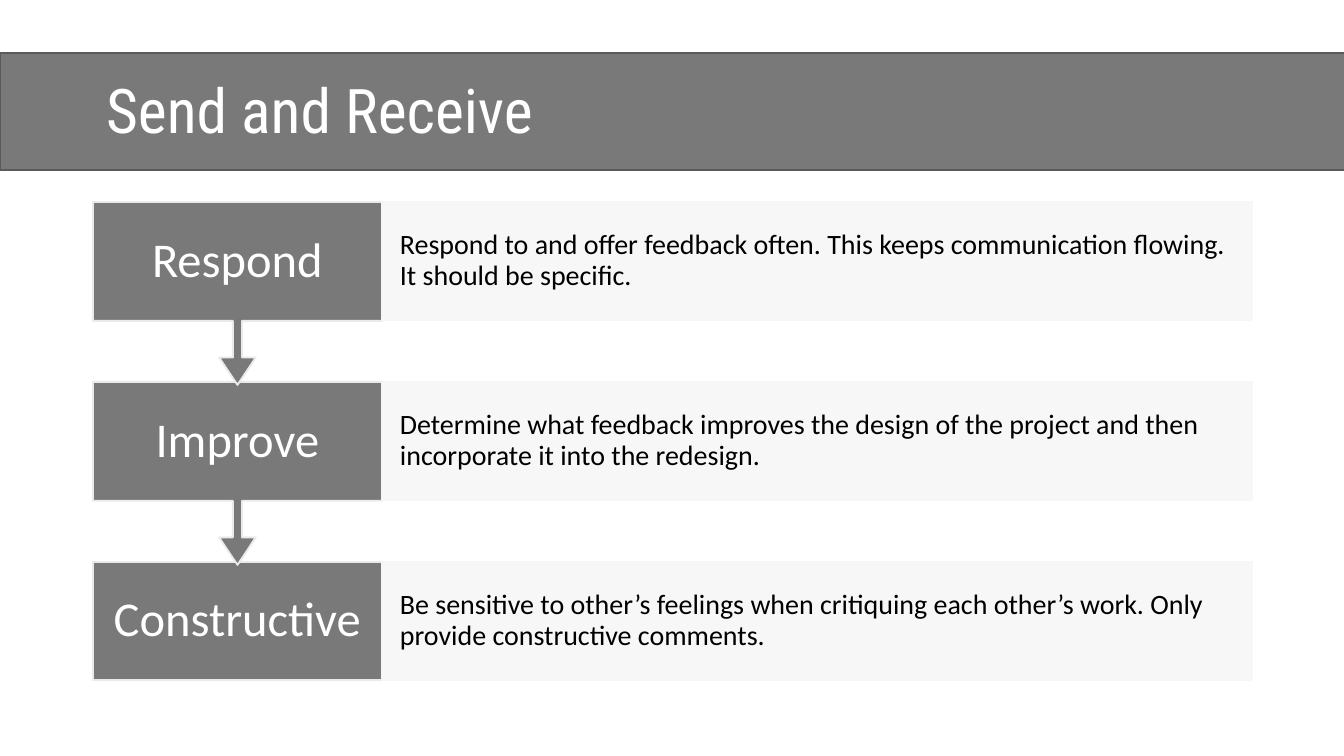
import dataclasses

import lxml.etree
import pptx
import pptx.dml.color
import pptx.enum.shapes
import pptx.enum.text
import pptx.oxml.ns
import pptx.util

# Content
TITLE = "Send and Receive"
STEPS = [
    ("Respond", "Respond to and offer feedback often. This keeps communication "
                "flowing. It should be specific."),
    ("Improve", "Determine what feedback improves the design of the project and "
                "then incorporate it into the redesign."),
    ("Constructive", "Be sensitive to other’s feelings when critiquing each "
                     "other’s work. Only provide constructive comments."),
]


@dataclasses.dataclass(frozen=True)
class Theme:
    accent: str = "797979"
    band_line: str = "5A5A5A"
    step_line: str = "EAEAEA"
    panel: str = "F7F7F7"
    panel_opacity: int = 90
    light: str = "FFFFFF"
    dark: str = "000000"
    title_font: str = "Roboto Condensed"
    body_font: str = "Calibri"
    title_size: int = 33
    step_size: int = 26
    detail_size: int = 15


THEME = Theme()
SHAPES = pptx.enum.shapes.MSO_SHAPE
ALIGN = pptx.enum.text.PP_ALIGN

# Layout in px
SLIDE_WIDTH, SLIDE_HEIGHT = 1344, 756
BAND = (0, 53, 1349, 117)
TITLE_BOX = (93, 40, 1158, 147)
TITLE_INSET, STEP_INSET = 13, 18
LEFT, TOP, PITCH = 93, 202, 180
STEP_WIDTH, STEP_HEIGHT, CALLOUT_HEIGHT = 289, 118, 183
DETAIL_WIDTH = 870
CALLOUT_ADJUSTMENTS = (0.05, 0.1, 0.15, 0.65)


def px(length):
    return pptx.util.Emu(round(length * 914400 / 134.4))


def rgb(code):
    return pptx.dml.color.RGBColor.from_string(code)


def add_block(slide, kind, box, fill, line):
    shape = slide.shapes.add_shape(kind, *map(px, box))
    shape.shadow.inherit = False
    shape.fill.solid()
    shape.fill.fore_color.rgb = rgb(fill)
    shape.line.color.rgb = rgb(line)
    shape.line.width = pptx.util.Pt(1)
    return shape


def set_opacity(shape, percent):
    tag = pptx.oxml.ns.qn("a:srgbClr")
    for color in shape.fill._xPr.iter(tag):
        alpha = lxml.etree.SubElement(color, pptx.oxml.ns.qn("a:alpha"))
        alpha.set("val", str(percent * 1000))


def set_text(shape, text, font, size, color, align, inset):
    frame = shape.text_frame
    frame.word_wrap = True
    frame.vertical_anchor = pptx.enum.text.MSO_ANCHOR.MIDDLE
    frame.margin_left = frame.margin_right = px(inset)
    frame.margin_top = frame.margin_bottom = 0
    paragraph = frame.paragraphs[0]
    paragraph.text = text
    paragraph.alignment = align
    paragraph.line_spacing = 0.9
    paragraph.font.name = font
    paragraph.font.size = pptx.util.Pt(size)
    paragraph.font.color.rgb = rgb(color)


def add_step(slide, index, name, detail):
    top = TOP + index * PITCH
    is_last = index == len(STEPS) - 1

    # Step name, with an arrow down to the next step
    kind = SHAPES.RECTANGLE if is_last else SHAPES.DOWN_ARROW_CALLOUT
    height = STEP_HEIGHT if is_last else CALLOUT_HEIGHT
    step = add_block(slide, kind, (LEFT, top, STEP_WIDTH, height),
                     THEME.accent, THEME.step_line)
    if not is_last:
        for position, value in enumerate(CALLOUT_ADJUSTMENTS):
            step.adjustments[position] = value
    set_text(step, name, THEME.body_font, THEME.step_size, THEME.light,
             ALIGN.CENTER, STEP_INSET)

    # Detail panel
    panel = add_block(slide, SHAPES.RECTANGLE,
                      (LEFT + STEP_WIDTH, top, DETAIL_WIDTH, STEP_HEIGHT),
                      THEME.panel, THEME.panel)
    set_opacity(panel, THEME.panel_opacity)
    set_text(panel, detail, THEME.body_font, THEME.detail_size, THEME.dark,
             ALIGN.LEFT, STEP_INSET)


def main():
    presentation = pptx.Presentation()
    presentation.slide_width = px(SLIDE_WIDTH)
    presentation.slide_height = px(SLIDE_HEIGHT)
    slide = presentation.slides.add_slide(presentation.slide_layouts[6])

    # Title band
    add_block(slide, SHAPES.RECTANGLE, BAND, THEME.accent, THEME.band_line)
    title = slide.shapes.add_textbox(*map(px, TITLE_BOX))
    set_text(title, TITLE, THEME.title_font, THEME.title_size, THEME.light,
             ALIGN.LEFT, TITLE_INSET)

    # Last step first, so each arrow tip lies over the next step
    for index, (name, detail) in reversed(list(enumerate(STEPS))):
        add_step(slide, index, name, detail)

    presentation.save("out.pptx")


if __name__ == "__main__":
    main()
